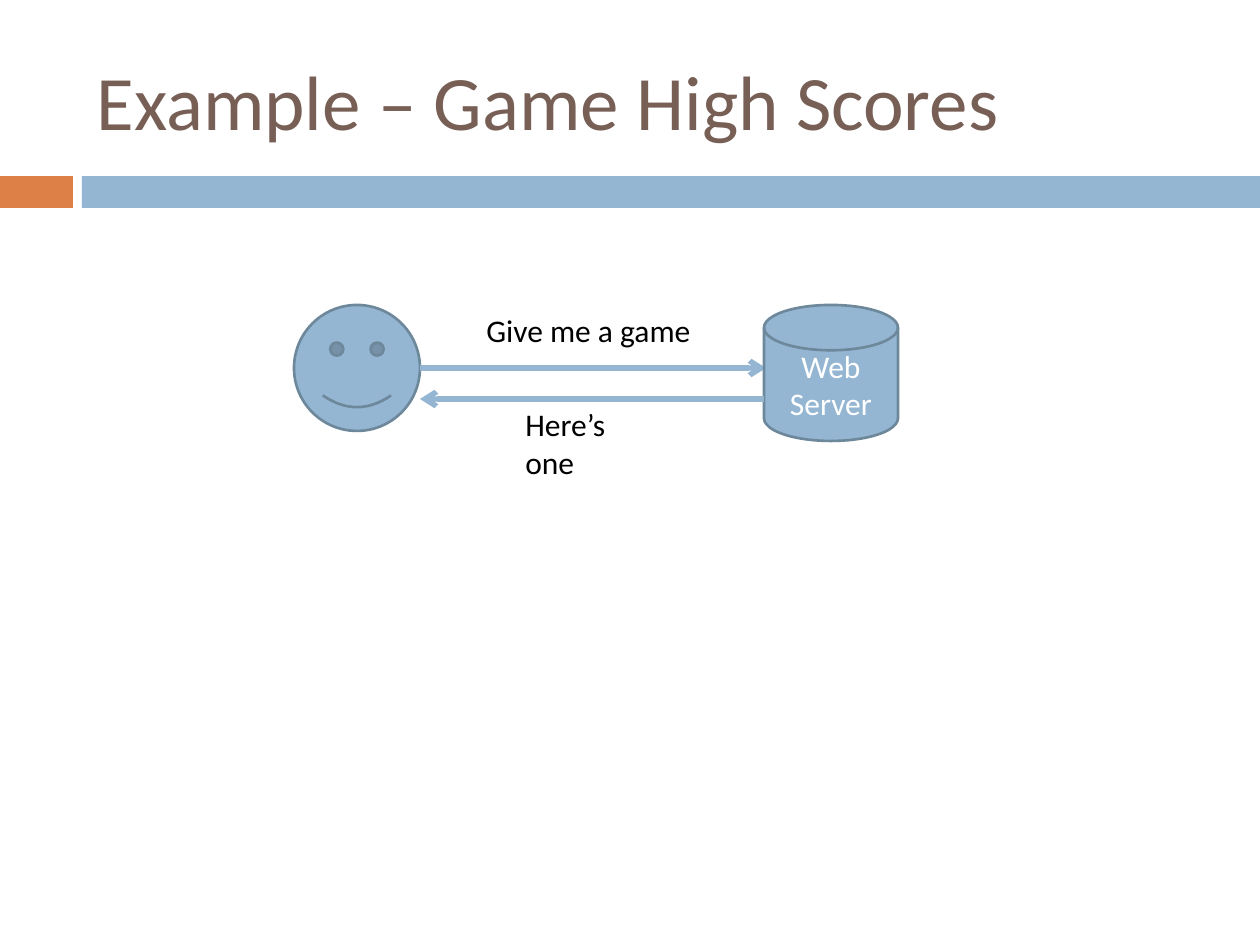
from dataclasses import dataclass

from lxml import etree
from pptx import Presentation
from pptx.dml.color import RGBColor
from pptx.enum.shapes import MSO_CONNECTOR, MSO_SHAPE
from pptx.enum.text import MSO_ANCHOR, PP_ALIGN
from pptx.oxml.ns import qn
from pptx.util import Emu, Pt

PX = 914400 / 126
RECTANGLE = MSO_SHAPE.RECTANGLE
SMILEY = MSO_SHAPE.SMILEY_FACE
DISK = MSO_SHAPE.FLOWCHART_MAGNETIC_DISK
STRAIGHT = MSO_CONNECTOR.STRAIGHT
MIDDLE, TOP = MSO_ANCHOR.MIDDLE, MSO_ANCHOR.TOP
LEFT, CENTER = PP_ALIGN.LEFT, PP_ALIGN.CENTER
TITLE_ONLY = 5


@dataclass(frozen=True)
class Theme:
    font: str = "Calibri"
    title_size: int = 44
    label_size: int = 18
    outline_width: float = 1.5
    arrow_width: int = 3
    title: RGBColor = RGBColor(0x77, 0x5F, 0x55)
    accent: RGBColor = RGBColor(0xDD, 0x80, 0x47)
    main: RGBColor = RGBColor(0x94, 0xB6, 0xD2)
    outline: RGBColor = RGBColor(0x6D, 0x87, 0x9B)
    dark: RGBColor = RGBColor(0, 0, 0)
    light: RGBColor = RGBColor(0xFF, 0xFF, 0xFF)


THEME = Theme()


def px(*lengths):
    return [Emu(round(length * PX)) for length in lengths]


def write(shape, lines, size, color, align=LEFT, anchor=TOP):
    frame = shape.text_frame
    frame.word_wrap = True
    frame.vertical_anchor = anchor
    frame.text = "\n".join(lines)
    for para in frame.paragraphs:
        para.alignment = align
        para.font.name = THEME.font
        para.font.size = Pt(size)
        para.font.color.rgb = color


def add_figure(page, kind, box, fill, outline=None):
    shape = page.shapes.add_shape(kind, *px(*box))
    shape.shadow.inherit = False
    shape.fill.solid()
    shape.fill.fore_color.rgb = fill
    if outline is None:
        shape.line.fill.background()
    else:
        shape.line.color.rgb = outline
        shape.line.width = Pt(THEME.outline_width)
    return shape


def add_arrow(page, start_x, end_x, y):
    arrow = page.shapes.add_connector(STRAIGHT, *px(start_x, y, end_x, y))
    arrow.line.color.rgb = THEME.main
    arrow.line.width = Pt(THEME.arrow_width)
    etree.SubElement(arrow.line._get_or_add_ln(), qn("a:tailEnd"), type="arrow")
    etree.SubElement(arrow._element.spPr, qn("a:effectLst"))


def add_label(page, text, box):
    label = page.shapes.add_textbox(*px(*box))
    write(label, [text], THEME.label_size, THEME.dark)


def add_header(page, box, text):
    """Place the title above a two-coloured band at the foot of the box."""
    left, top, width, height = box
    band, accent, gap = 32, 73, 9
    band_top = top + height - band
    main_left = left + accent + gap
    add_figure(page, RECTANGLE, (left, band_top, accent, band), THEME.accent)
    add_figure(page, RECTANGLE,
               (main_left, band_top, width - accent - gap, band), THEME.main)
    title = page.shapes.title
    title.left, title.top, title.width, title.height = px(
        left + 84, top + 32, 1124, 136)
    write(title, [text], THEME.title_size, THEME.title, anchor=MIDDLE)


def add_exchange(page, box, request, reply, server_lines):
    """Draw a user and a server joined by a request and a reply arrow."""
    left, top, width, height = box
    face, disk, label_height = 126, 134, 50
    user_edge, server_edge = left + face, left + width - disk
    request_y, reply_y = top + 63, top + 94
    add_figure(page, SMILEY, (left, top, face, face), THEME.main, THEME.outline)
    add_arrow(page, user_edge, server_edge + 2, request_y)
    server = add_figure(page, DISK, (server_edge, top, disk, height),
                        THEME.main, THEME.outline)
    write(server, server_lines, THEME.label_size, THEME.light, CENTER, MIDDLE)
    add_label(page, request, (left + 180, top, 238, label_height))
    add_arrow(page, server_edge, user_edge, reply_y)
    add_label(page, reply, (left + 219, reply_y, 159, label_height))


def main():
    deck = Presentation()
    deck.slide_width, deck.slide_height = px(1260, 945)
    page = deck.slides.add_slide(deck.slide_layouts[TITLE_ONLY])
    add_header(page, (0, 0, 1260, 208), "Example – Game High Scores")
    add_exchange(page, (294, 305, 604, 136),
                 "Give me a game", "Here’s one", ["Web", "Server"])
    deck.save("out.pptx")


if __name__ == "__main__":
    main()
